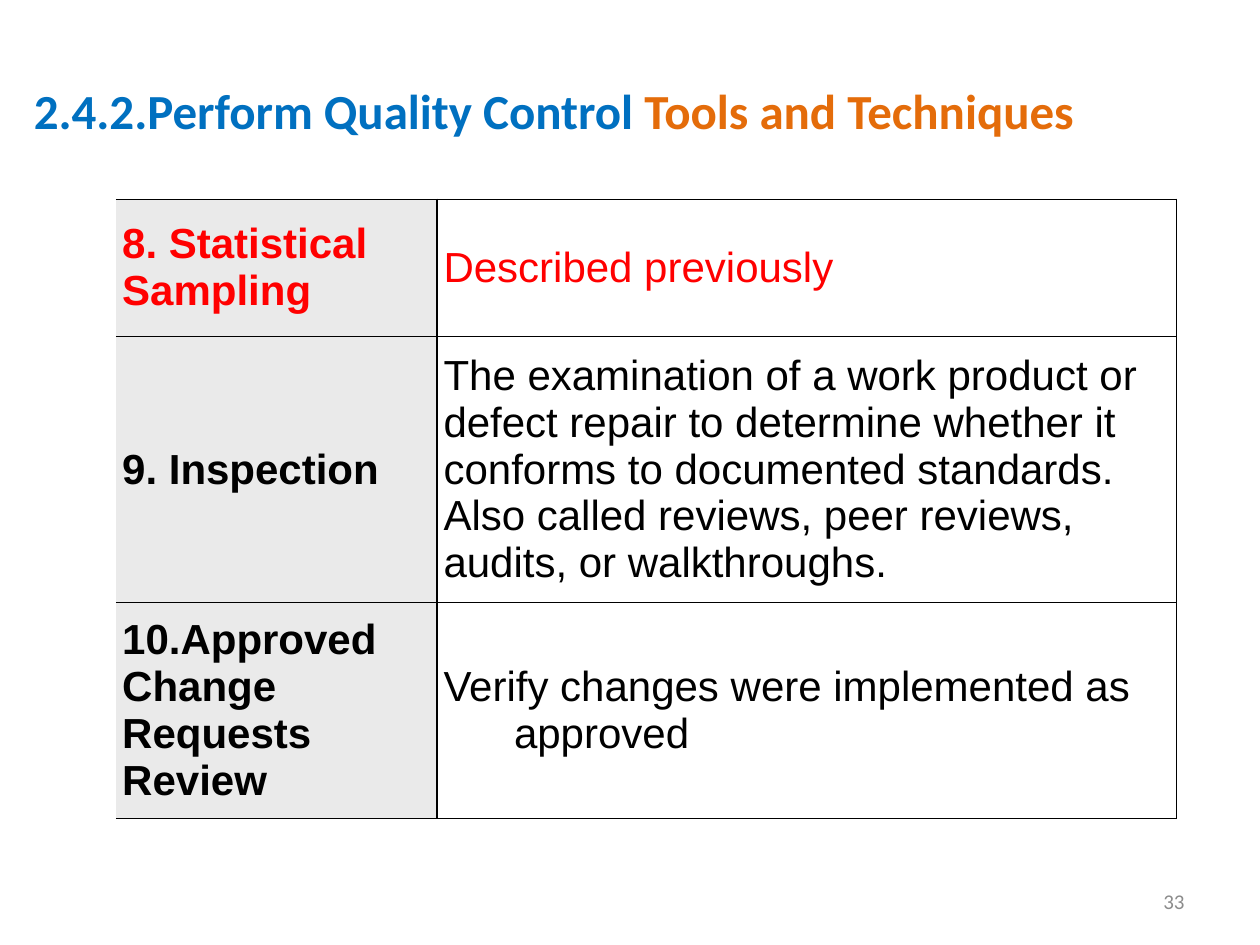
from dataclasses import dataclass
from typing import Any

from lxml.etree import SubElement
from pptx import Presentation
from pptx.dml.color import RGBColor
from pptx.enum.text import MSO_ANCHOR as Anchor, PP_ALIGN as Align
from pptx.oxml.ns import qn
from pptx.util import Pt

RED, BLACK, BLUE, ORANGE, GREY, PALE = "FF0000", "000000", "0070C0", "E46C0A", "8C8C8C", "EAEAEA"
COLUMN_WIDTHS = (183.6, 422.64)
TABLE_LEFT, TABLE_TOP = 66.24, 113.76


@dataclass(frozen=True)
class Technique:
    name: str
    description: str
    height: float
    color: str = BLACK
    indent: float = 0


@dataclass(frozen=True)
class Span:
    text: str
    size: float
    font: str
    color: str
    bold: bool = False


TECHNIQUES = (
    Technique("8. Statistical Sampling", "Described previously", 78.6, RED),
    Technique(
        "9. Inspection",
        "The examination of a work product or defect repair to determine whether it "
        "conforms to documented standards. Also called reviews, peer reviews, "
        "audits, or walkthroughs.",
        152,
    ),
    Technique(
        "10.Approved Change Requests Review",
        "Verify changes were implemented as approved",
        123.4,
        indent=40.32,
    ),
)


def rgb(value: str) -> RGBColor:
    return RGBColor.from_string(value)


def apply(target: Any, values: dict[str, Any]) -> None:
    for name, value in values.items():
        setattr(target, name, value)


def write(para: Any, spans: tuple[Span, ...], indent: float = 0) -> None:
    if indent:
        properties = para._p.get_or_add_pPr()
        properties.set("marL", str(Pt(indent)))
        properties.set("indent", str(-Pt(indent)))
    for span in spans:
        run = para.add_run()
        run.text = span.text
        apply(run.font, {"size": Pt(span.size), "name": span.font, "bold": span.bold})
        run.font.color.rgb = rgb(span.color)


def add_text(page: Any, bounds: tuple[float, ...], spans: tuple[Span, ...],
             align: Align = Align.LEFT, indent: float = 0) -> None:
    box = page.shapes.add_textbox(*map(Pt, bounds))
    apply(box.text_frame, {"word_wrap": True, "vertical_anchor": Anchor.MIDDLE})
    para = box.text_frame.paragraphs[0]
    para.alignment = align
    write(para, spans, indent)


def set_borders(cell: Any, widths: dict[str, float]) -> None:
    properties = cell._tc.get_or_add_tcPr()
    for index, (side, width) in enumerate(widths.items()):
        line = SubElement(properties, qn(f"a:ln{side}"), w=str(Pt(width)))
        if width:
            fill = SubElement(line, qn("a:solidFill"))
            SubElement(fill, qn("a:srgbClr"), val=BLACK)
        else:
            SubElement(line, qn("a:noFill"))
        properties.insert(index, line)


def add_techniques(page: Any, techniques: tuple[Technique, ...]) -> None:
    height = sum(technique.height for technique in techniques)
    bounds = (TABLE_LEFT, TABLE_TOP, sum(COLUMN_WIDTHS), height)
    frame = page.shapes.add_table(len(techniques), len(COLUMN_WIDTHS), *map(Pt, bounds))
    table = frame.table
    apply(table, {"first_row": False, "horz_banding": False})
    for column, width in zip(table.columns, COLUMN_WIDTHS):
        column.width = Pt(width)
    margins = {f"margin_{side}": Pt(3.6) for side in ("left", "top", "right", "bottom")}
    for row, technique in enumerate(techniques):
        table.rows[row].height = Pt(technique.height)
        for column, text in enumerate((technique.name, technique.description)):
            is_name = column == 0
            cell = table.cell(row, column)
            apply(cell, {"vertical_anchor": Anchor.MIDDLE, **margins})
            if is_name:
                cell.fill.solid()
                cell.fill.fore_color.rgb = rgb(PALE)
            else:
                cell.fill.background()
            set_borders(cell, {
                "L": 0 if is_name else 1,
                "R": 1 if is_name else 0.5,
                "T": 1 if row else 0.5,
                "B": 1,
            })
            span = Span(text, 24, "Arial", technique.color, is_name)
            write(cell.text_frame.paragraphs[0], (span,), 0 if is_name else technique.indent)


def main() -> None:
    """Build the quality control techniques slide."""
    deck = Presentation()
    apply(deck, {"slide_width": Pt(720), "slide_height": Pt(540)})
    page = deck.slides.add_slide(deck.slide_layouts[6])
    add_text(page, (516.24, 500.4, 167.76, 28.8), (Span("33", 12, "Calibri", GREY),), Align.RIGHT)
    add_techniques(page, TECHNIQUES)
    add_text(page, (12.24, 36, 684, 54), (
        Span("2.4.2.Perform Quality Control ", 28, "Calibri", BLUE, True),
        Span("Tools and Techniques", 28, "Calibri", ORANGE, True),
    ), indent=94.32)
    deck.save("out.pptx")


if __name__ == "__main__":
    main()
